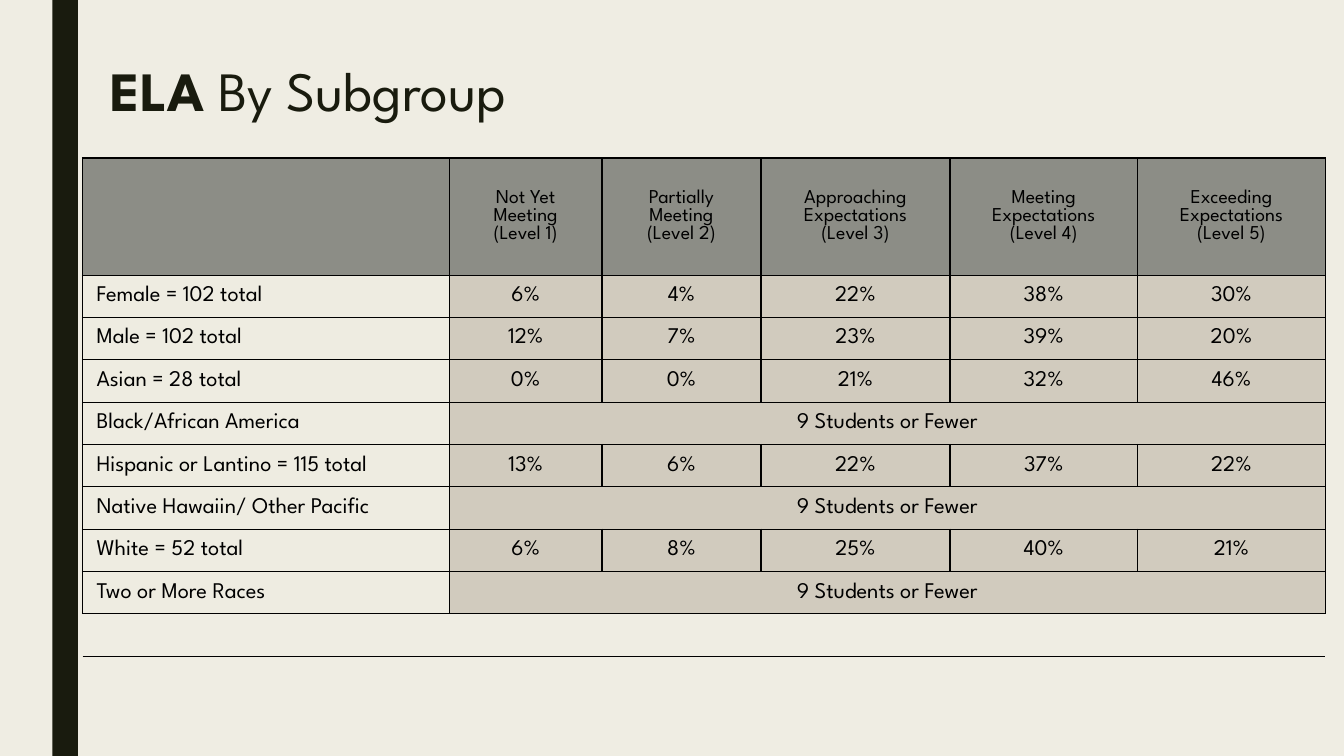
from lxml import etree
from pptx import Presentation
from pptx.dml.color import RGBColor
from pptx.enum.shapes import MSO_SHAPE
from pptx.enum.text import MSO_ANCHOR, PP_ALIGN
from pptx.oxml.ns import qn
from pptx.util import Pt

RECTANGLE = MSO_SHAPE.RECTANGLE
TOP, MIDDLE = MSO_ANCHOR.TOP, MSO_ANCHOR.MIDDLE
LEFT, CENTER = PP_ALIGN.LEFT, PP_ALIGN.CENTER

FONT = "League Spartan"
COLORS = {
    "background": "EFEDE3",
    "dark": "191B0E",
    "header": "8C8D86",
    "label": "EEECE1",
    "value": "D1CBBE",
    "black": "000000",
}

COLUMN_WIDTHS = [262, 109, 113.6, 135, 134, 134.2]
HEADER_HEIGHT, ROW_HEIGHT = 83.6, 30.25
EMPTY_ROWS = 2
LEVELS = [
    [],
    ["Not Yet Meeting", "(Level 1)"],
    ["Partially", "Meeting", "(Level 2)"],
    ["Approaching", "Expectations", "(Level 3)"],
    ["Meeting", "Expectations", "(Level 4)"],
    ["Exceeding Expectations", "(Level 5)"],
]
TOO_FEW = ["9 Students or Fewer"]
SUBGROUPS = [
    ("Female = 102 total", ["6%", "4%", "22%", "38%", "30%"]),
    ("Male = 102 total", ["12%", "7%", "23%", "39%", "20%"]),
    ("Asian = 28 total", ["0%", "0%", "21%", "32%", "46%"]),
    ("Black/African America", TOO_FEW),
    ("Hispanic or Lantino = 115 total", ["13%", "6%", "22%", "37%", "22%"]),
    ("Native Hawaiin/ Other Pacific", TOO_FEW),
    ("White = 52 total", ["6%", "8%", "25%", "40%", "21%"]),
    ("Two or More Races", TOO_FEW),
]


def color(name):
    return RGBColor.from_string(COLORS[name])


def add_run(paragraph, text, size, color_name, bold=False):
    run = paragraph.add_run()
    run.text = text
    run.font.name = FONT
    run.font.size = Pt(size)
    run.font.bold = bold
    run.font.color.rgb = color(color_name)


def add_side_bar(slide):
    bar = slide.shapes.add_shape(RECTANGLE, Pt(37.5), Pt(0), Pt(18.2), Pt(540))
    bar.shadow.inherit = False
    bar.fill.solid()
    bar.fill.fore_color.rgb = color("dark")
    bar.line.fill.background()


def add_title(slide):
    frame = slide.shapes.add_textbox(Pt(72), Pt(32.4), Pt(756), Pt(70.6)).text_frame
    frame.word_wrap = True
    frame.vertical_anchor = TOP
    frame.margin_top = Pt(13.5)
    paragraph = frame.paragraphs[0]
    paragraph.line_spacing = 0.89
    add_run(paragraph, "ELA", 39.6, "dark", bold=True)
    add_run(paragraph, " By Subgroup", 39.6, "dark")


def set_borders(cell, visible):
    """Draw the sides named in visible (letters of LRTB) and hide the others."""
    properties = cell._tc.get_or_add_tcPr()
    for position, side in enumerate("LRTB"):
        line = etree.Element(qn(f"a:ln{side}"), w=str(Pt(1)))
        if side in visible:
            fill = etree.SubElement(line, qn("a:solidFill"))
            etree.SubElement(fill, qn("a:srgbClr"), val=COLORS["black"])
        else:
            etree.SubElement(line, qn("a:noFill"))
        properties.insert(position, line)


def fill_cell(cell, lines, fill_name, size=16, align=CENTER):
    cell.fill.solid()
    cell.fill.fore_color.rgb = color(fill_name)
    cell.vertical_anchor = MIDDLE
    cell.margin_left = cell.margin_right = Pt(10)
    cell.margin_top = cell.margin_bottom = Pt(3.6)
    frame = cell.text_frame
    for index, text in enumerate(lines):
        paragraph = frame.add_paragraph() if index else frame.paragraphs[0]
        paragraph.alignment = align
        add_run(paragraph, text, size, "black")


def add_subgroup_table(slide):
    heights = [HEADER_HEIGHT] + [ROW_HEIGHT] * (len(SUBGROUPS) + EMPTY_ROWS)
    table = slide.shapes.add_table(
        len(heights), len(COLUMN_WIDTHS), Pt(59), Pt(112.9),
        Pt(sum(COLUMN_WIDTHS)), Pt(sum(heights)),
    ).table
    table.first_row = table.horz_banding = False
    for column, width in zip(table.columns, COLUMN_WIDTHS):
        column.width = Pt(width)
    for row, height in zip(table.rows, heights):
        row.height = Pt(height)

    for column, lines in enumerate(LEVELS):
        fill_cell(table.cell(0, column), lines, "header", size=14)
    last_column = len(COLUMN_WIDTHS) - 1
    for row, (subgroup, values) in enumerate(SUBGROUPS, start=1):
        fill_cell(table.cell(row, 0), [subgroup], "label", align=LEFT)
        if values is TOO_FEW:
            table.cell(row, 1).merge(table.cell(row, last_column))
        for column, value in enumerate(values, start=1):
            fill_cell(table.cell(row, column), [value], "value")

    first_empty = len(SUBGROUPS) + 1
    empty_borders = {first_empty: "TB", first_empty + 1: "T"}
    for row in range(len(heights)):
        for column in range(len(COLUMN_WIDTHS)):
            cell = table.cell(row, column)
            if row >= first_empty:
                cell.fill.background()
            set_borders(cell, empty_borders.get(row, "LRTB"))


def main():
    presentation = Presentation()
    presentation.slide_width, presentation.slide_height = Pt(960), Pt(540)
    slide = presentation.slides.add_slide(presentation.slide_layouts[6])
    slide.background.fill.solid()
    slide.background.fill.fore_color.rgb = color("background")
    add_side_bar(slide)
    add_title(slide)
    add_subgroup_table(slide)
    presentation.save("out.pptx")


if __name__ == "__main__":
    main()
